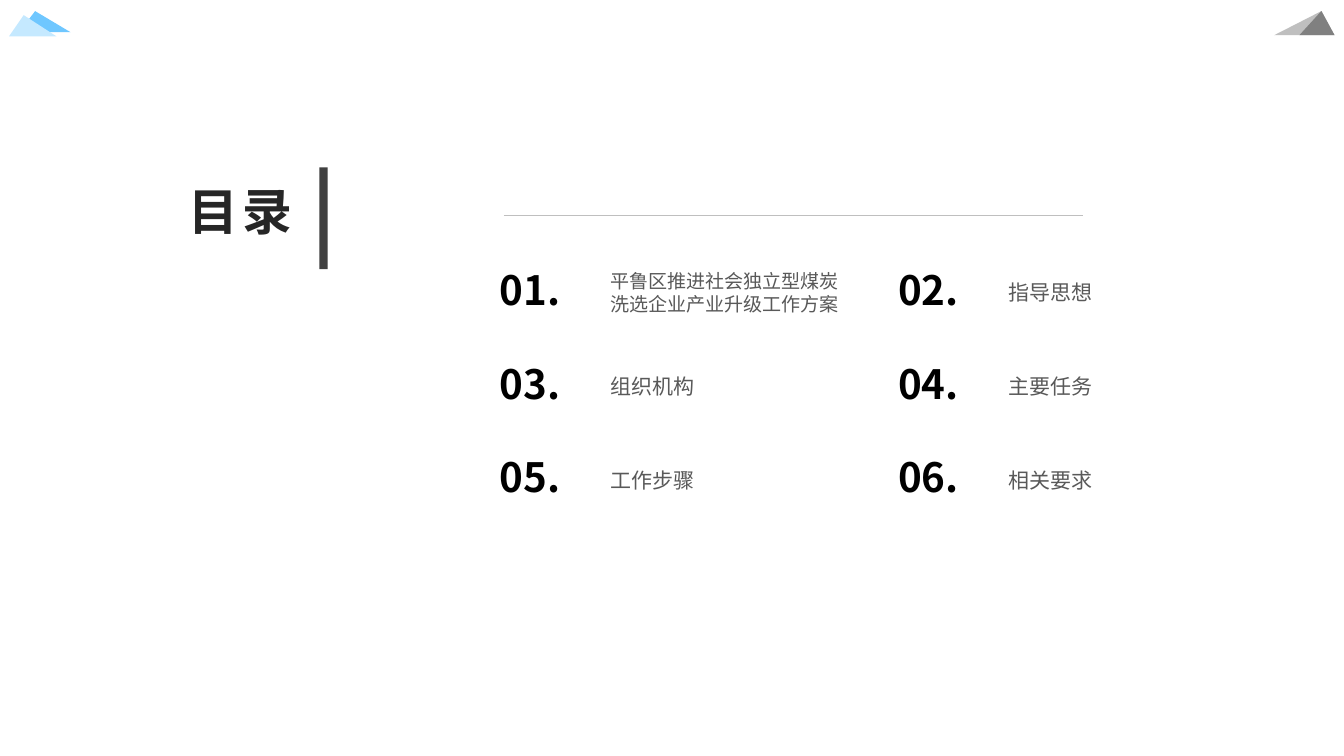
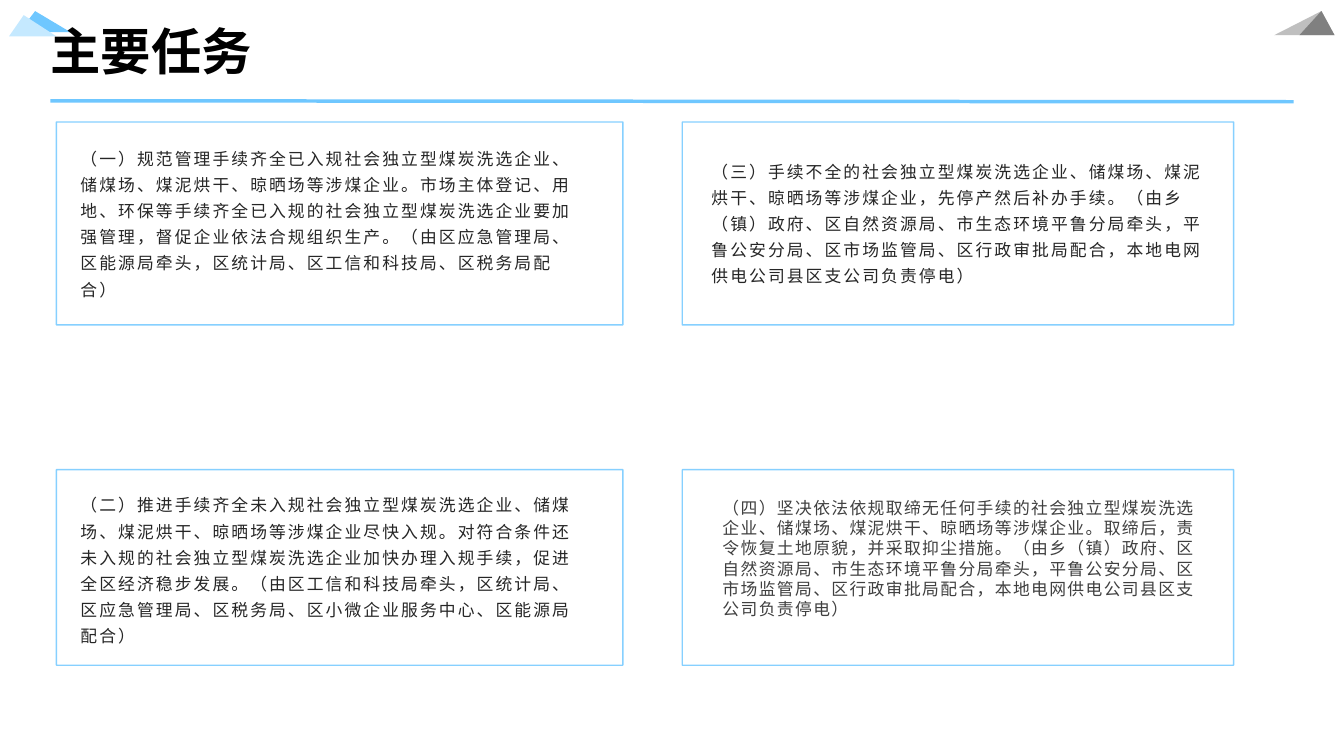
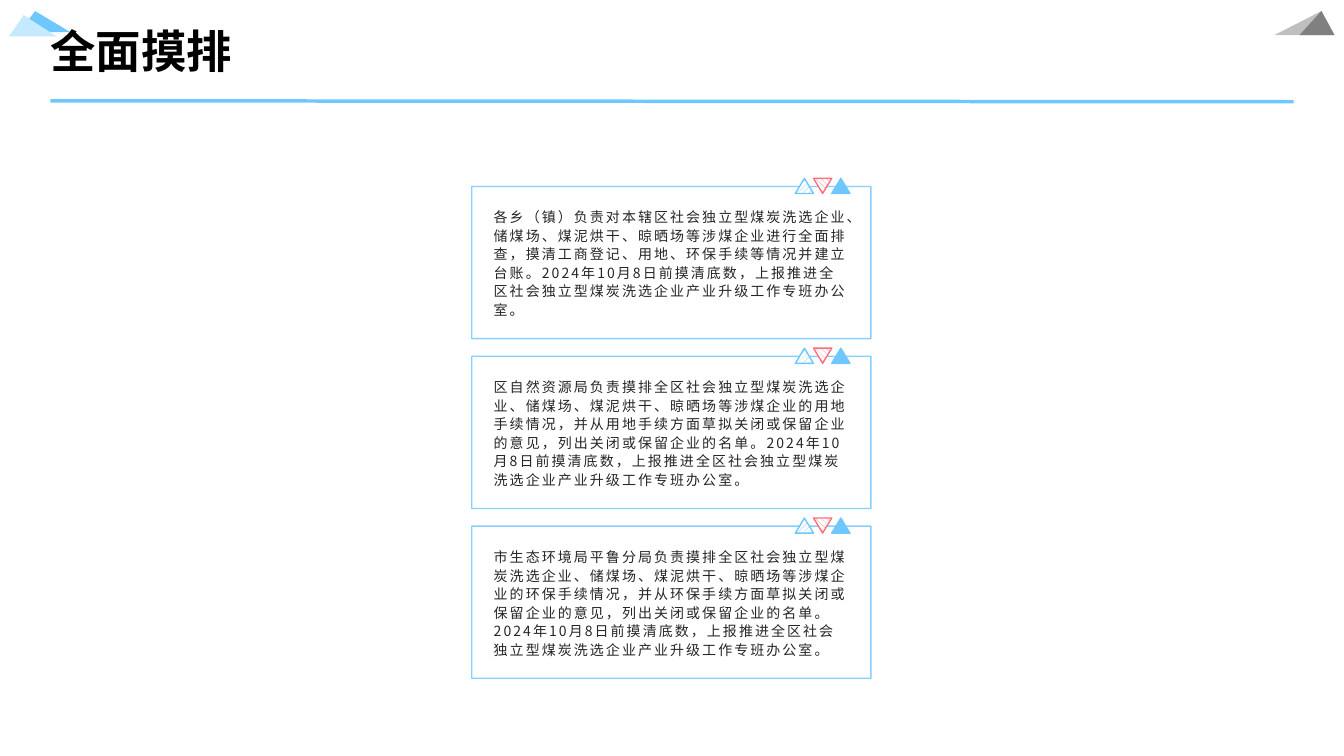
from dataclasses import dataclass

import lxml.etree
import pptx
import pptx.dml.color
import pptx.enum.dml
import pptx.enum.shapes
import pptx.enum.text
import pptx.oxml.ns
import pptx.util

Pt = pptx.util.Pt
qn = pptx.oxml.ns.qn
SHAPES = pptx.enum.shapes.MSO_SHAPE
PATTERNS = pptx.enum.dml.MSO_PATTERN
ANCHOR = pptx.enum.text.MSO_ANCHOR
ALIGN = pptx.enum.text.PP_ALIGN


@dataclass(frozen=True)
class Theme:
    font: str = "Noto Sans CJK SC"
    blue: str = "6FC7FF"
    pale_blue: str = "C5E9FF"
    red: str = "FF6F7F"
    white: str = "FFFFFF"
    black: str = "000000"
    ink: str = "262626"
    dark: str = "404040"
    label: str = "595959"
    grey: str = "808080"
    silver: str = "BFBFBF"
    contents_title: float = 35.6
    wide_title: float = 36
    short_title: float = 32.4
    number_size: float = 28.8
    label_size: float = 15
    long_label_size: float = 13.6
    task_size: float = 12
    survey_size: float = 10


THEME = Theme()

CONTENTS = [
    "平鲁区推进社会独立型煤炭洗选企业产业升级工作方案",
    "指导思想", "组织机构", "主要任务", "工作步骤", "相关要求",
]

TASKS = [
    "（一）规范管理手续齐全已入规社会独立型煤炭洗选企业、储煤场、煤泥烘干、晾晒场等涉煤企业。"
    "市场主体登记、用地、环保等手续齐全已入规的社会独立型煤炭洗选企业要加强管理，督促企业依法合规组织生产。"
    "（由区应急管理局、区能源局牵头，区统计局、区工信和科技局、区税务局配合）",
    "（二）推进手续齐全未入规社会独立型煤炭洗选企业、储煤场、煤泥烘干、晾晒场等涉煤企业尽快入规。"
    "对符合条件还未入规的社会独立型煤炭洗选企业加快办理入规手续，促进全区经济稳步发展。"
    "（由区工信和科技局牵头，区统计局、区应急管理局、区税务局、区小微企业服务中心、区能源局配合）",
    "（三）手续不全的社会独立型煤炭洗选企业、储煤场、煤泥烘干、晾晒场等涉煤企业，先停产然后补办手续。"
    "（由乡（镇）政府、区自然资源局、市生态环境平鲁分局牵头，平鲁公安分局、区市场监管局、"
    "区行政审批局配合，本地电网供电公司县区支公司负责停电）",
    "（四）坚决依法依规取缔无任何手续的社会独立型煤炭洗选企业、储煤场、煤泥烘干、晾晒场等涉煤企业。"
    "取缔后，责令恢复土地原貌，并采取抑尘措施。"
    "（由乡（镇）政府、区自然资源局、市生态环境平鲁分局牵头，平鲁公安分局、区市场监管局、"
    "区行政审批局配合，本地电网供电公司县区支公司负责停电）",
]

SURVEYS = [
    "各乡（镇）负责对本辖区社会独立型煤炭洗选企业、储煤场、煤泥烘干、晾晒场等涉煤企业进行全面排查，"
    "摸清工商登记、用地、环保手续等情况并建立台账。2024年10月8日前摸清底数，"
    "上报推进全区社会独立型煤炭洗选企业产业升级工作专班办公室。",
    "区自然资源局负责摸排全区社会独立型煤炭洗选企业、储煤场、煤泥烘干、晾晒场等涉煤企业的用地手续情况，"
    "并从用地手续方面草拟关闭或保留企业的意见，列出关闭或保留企业的名单。2024年10月8日前摸清底数，"
    "上报推进全区社会独立型煤炭洗选企业产业升级工作专班办公室。",
    "市生态环境局平鲁分局负责摸排全区社会独立型煤炭洗选企业、储煤场、煤泥烘干、晾晒场等涉煤企业的环保手续情况，"
    "并从环保手续方面草拟关闭或保留企业的意见，列出关闭或保留企业的名单。2024年10月8日前摸清底数，"
    "上报推进全区社会独立型煤炭洗选企业产业升级工作专班办公室。",
]


def color(value):
    return pptx.dml.color.RGBColor.from_string(value)


def points(*lengths):
    return [Pt(length) for length in lengths]


# Text
def write(shape, text, size, ink, bold=False, spacing=0, line_spacing=1.0,
          align=ALIGN.LEFT, anchor=ANCHOR.TOP, insets=(7.2, 3.6)):
    frame = shape.text_frame
    frame.text = text
    frame.word_wrap = True
    frame.auto_size = pptx.enum.text.MSO_AUTO_SIZE.NONE
    frame.vertical_anchor = anchor
    frame.margin_left = frame.margin_right = Pt(insets[0])
    frame.margin_top = frame.margin_bottom = Pt(insets[1])
    paragraph = frame.paragraphs[0]
    paragraph.alignment = align
    paragraph.line_spacing = line_spacing
    font = paragraph.runs[0].font
    font.size, font.bold, font.name = Pt(size), bold, THEME.font
    font.color.rgb = color(ink)
    # East Asian typeface and letter spacing
    for properties in shape.element.xpath(".//a:rPr"):
        properties.set("spc", str(round(spacing * 100)))
        lxml.etree.SubElement(properties, qn("a:ea"), typeface=THEME.font)


def add_text(slide, box, text, size, ink, **style):
    write(slide.shapes.add_textbox(*points(*box)), text, size, ink, **style)


def set_title(slide, box, text, size, ink=THEME.black, **style):
    title = slide.shapes.title
    title.left, title.top, title.width, title.height = points(*box)
    write(title, text, size, ink, bold=True, **style)


# Shapes and lines
def add_shape(shapes, kind, box, fill=None):
    shape = shapes.add_shape(kind, *points(*box))
    shape.shadow.inherit = False
    shape.line.fill.background()
    if fill:
        shape.fill.solid()
        shape.fill.fore_color.rgb = color(fill)
    else:
        shape.fill.background()
    return shape


def set_line(item, ink, width):
    item.line.color.rgb = color(ink)
    item.line.width = Pt(width)


def add_rule(slide, ends, ink, width):
    rule = slide.shapes.add_connector(
        pptx.enum.shapes.MSO_CONNECTOR.STRAIGHT, *points(*ends))
    set_line(rule, ink, width)
    lxml.etree.SubElement(rule.element.spPr, qn("a:effectLst"))


def add_card(slide, box):
    card = add_shape(slide.shapes, SHAPES.RECTANGLE, box)
    set_line(card, THEME.blue, 1)
    for line_color in card.element.xpath(".//a:ln//a:srgbClr"):
        lxml.etree.SubElement(line_color, qn("a:alpha"), val="84000")


def add_card_triangles(slide, left, top):
    width, height = 13, 10.8
    styles = [
        (PATTERNS.WIDE_UPWARD_DIAGONAL, THEME.blue, False),
        (PATTERNS.WIDE_DOWNWARD_DIAGONAL, THEME.red, True),
        (PATTERNS.DARK_HORIZONTAL, THEME.blue, False),
    ]
    for index, (pattern, ink, flipped) in enumerate(styles):
        triangle = add_shape(slide.shapes, SHAPES.ISOSCELES_TRIANGLE,
                             (left + index * width, top, width, height))
        triangle.fill.patterned()
        triangle.fill.pattern = pattern
        triangle.fill.fore_color.rgb = color(ink)
        triangle.fill.back_color.rgb = color(THEME.white)
        set_line(triangle, ink, 1)
        if flipped:
            triangle.element.xpath(".//a:xfrm")[0].set("flipV", "1")


# Corner peaks shared by every slide, kept on the master
def add_master_peaks(presentation, slide):
    corners = [
        [((910.1, 7.9, 43.2, 17.3), 0.785, THEME.silver),
         ((928.1, 7.9, 25.2, 17.3), 0.626, THEME.grey)],
        [((13.7, 7.9, 36.7, 15.1), 0.31, THEME.blue),
         ((6.5, 10.8, 33.8, 15.1), 0.31, THEME.pale_blue)],
    ]
    master = presentation.slide_master
    for peaks in corners:
        group = slide.shapes.add_group_shape()
        for box, apex, fill in peaks:
            peak = add_shape(group.shapes, SHAPES.ISOSCELES_TRIANGLE, box, fill)
            peak.adjustments[0] = apex
        master.shapes.element.append(group.element)
    for number, properties in enumerate(master.element.xpath(".//p:cNvPr"), 1):
        properties.set("id", str(number))


def add_slide(presentation):
    return presentation.slides.add_slide(presentation.slide_layouts[5])


def add_topic_slide(presentation, title, size):
    slide = add_slide(presentation)
    add_rule(slide, (36, 72, 924, 72.7), THEME.blue, 2.5)
    set_title(slide, (36, 12.2, 888, 48.2), title, size,
              anchor=ANCHOR.MIDDLE, insets=(0, 0))
    return slide


# Slides
def build_contents(presentation):
    slide = add_slide(presentation)
    add_master_peaks(presentation, slide)
    add_shape(slide.shapes, SHAPES.RECTANGLE, (228.2, 119.5, 5.8, 72.7), THEME.dark)
    set_title(slide, (95.8, 125.3, 120.2, 60.5), "目录", THEME.contents_title,
              THEME.ink, spacing=3, align=ALIGN.RIGHT)
    for index, label in enumerate(CONTENTS):
        row, column = divmod(index, 2)
        left, top = 350 + column * 284.4, 185.8 + row * 66.9
        add_text(slide, (left, top, 59, 46), f"{index + 1:02d}.",
                 THEME.number_size, THEME.black, bold=True)
        size = THEME.long_label_size if len(label) > 10 else THEME.label_size
        add_text(slide, (left + 79.2, top + 5.7, 182.9, 34.6), label, size,
                 THEME.label, anchor=ANCHOR.MIDDLE, insets=(7.2, 0))
    add_rule(slide, (360, 154.1, 773.3, 154.1), THEME.silver, 0.5)


def build_tasks(presentation):
    slide = add_topic_slide(presentation, "主要任务", THEME.wide_title)
    # Card left and width, text left and width
    columns = [(40.3, 404.6, 50.4, 374.4), (487.4, 393.8, 501.1, 367.2)]
    # Card top and height, text top and height
    rows = [(87.1, 145, 103, 109.4), (335.5, 139.7, 352.1, 106.6)]
    regular = dict(ink=THEME.ink, spacing=1.5, line_spacing=1.3, anchor=ANCHOR.MIDDLE)
    compact = dict(ink=THEME.dark, spacing=1)
    for index, task in enumerate(TASKS):
        column, row = divmod(index, 2)
        left, width, text_left, text_width = columns[column]
        top, height, text_top, text_height = rows[row]
        add_card(slide, (left, top, width, height))
        last = index == len(TASKS) - 1
        indent = 7.9 if last else 0
        add_text(slide, (text_left + indent, text_top, text_width - indent, text_height),
                 task, THEME.task_size, **(compact if last else regular))


def build_surveys(presentation):
    slide = add_topic_slide(presentation, "全面摸排", THEME.short_title)
    left = 337
    for index, survey in enumerate(SURVEYS):
        top = 133.2 + index * 121.3
        add_card(slide, (left, top, 285.1, 108.7))
        add_card_triangles(slide, left + 231.1, top - 5.8)
        add_text(slide, (left + 8.6, top + 9.9, 269.3, 89.3), survey,
                 THEME.survey_size, THEME.ink, spacing=1.5, line_spacing=1.1,
                 anchor=ANCHOR.MIDDLE)


def main():
    presentation = pptx.Presentation()
    presentation.slide_width, presentation.slide_height = points(960, 540)
    build_contents(presentation)
    build_tasks(presentation)
    build_surveys(presentation)
    presentation.save("out.pptx")


if __name__ == "__main__":
    main()
